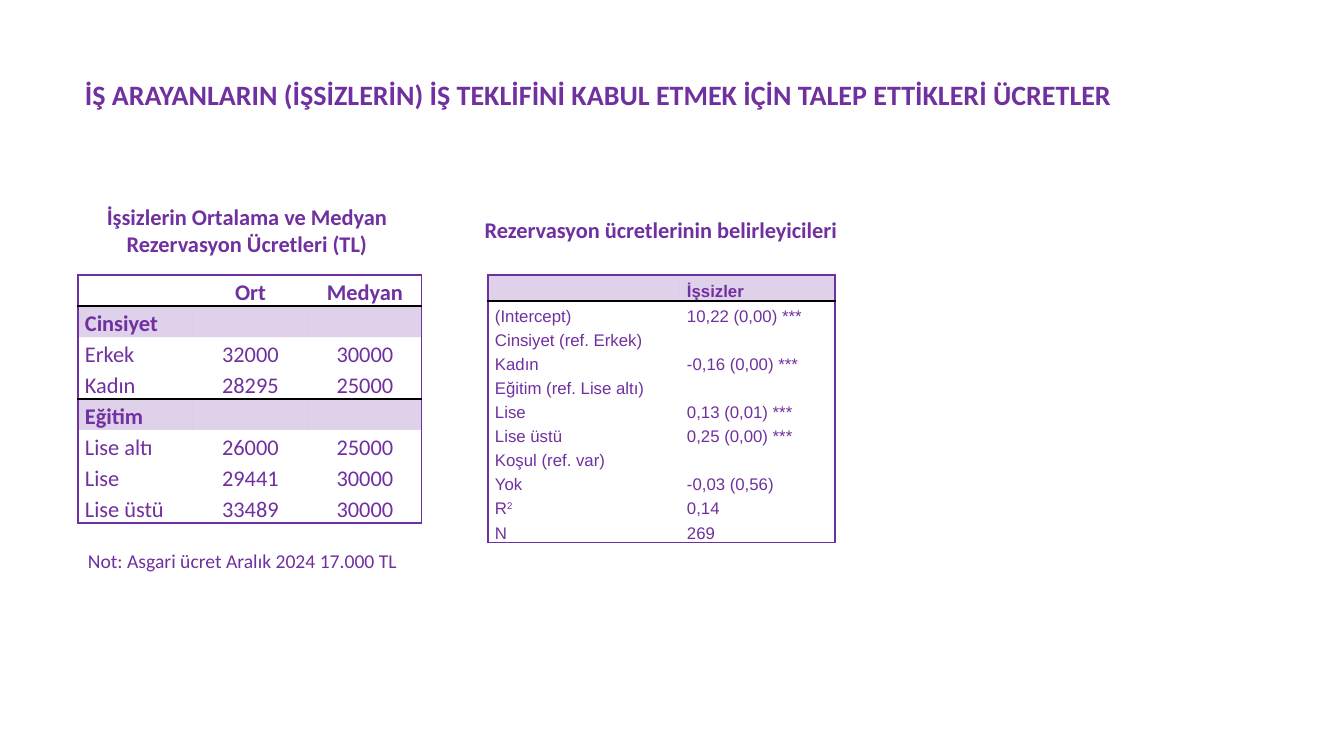
from dataclasses import dataclass

from lxml import etree
from pptx import Presentation
from pptx import util as u
from pptx.dml.color import RGBColor
from pptx.enum import text as t
from pptx.oxml import ns


@dataclass(frozen=True)
class Theme:
    purple: str = "7030A0"
    black: str = "000000"
    band_alpha: int = 22000
    body_font: str = "Calibri"
    model_font: str = "Arial"
    title: int = 20
    heading: int = 16
    note: int = 14
    model: int = 12
    thin: float = 1
    thick: float = 2.25


THEME = Theme()
LEFT, CENTER = t.PP_ALIGN.LEFT, t.PP_ALIGN.CENTER
OUTER = (THEME.purple, THEME.thin)
HEADER_RULE = (THEME.black, THEME.thick)
GROUP_RULE = (THEME.black, THEME.thin)

WAGES = [
    ("", "Ort", "Medyan"),
    ("Cinsiyet", "", ""),
    ("Erkek", "32000", "30000"),
    ("Kadın", "28295", "25000"),
    ("Eğitim", "", ""),
    ("Lise altı", "26000", "25000"),
    ("Lise", "29441", "30000"),
    ("Lise üstü", "33489", "30000"),
]
MODEL = [
    ("", "İşsizler"),
    ("(Intercept)", "10,22 (0,00) ***"),
    ("Cinsiyet (ref. Erkek)", ""),
    ("Kadın", "-0,16 (0,00) ***"),
    ("Eğitim (ref. Lise altı)", ""),
    ("Lise", "0,13 (0,01) ***"),
    ("Lise üstü", "0,25 (0,00) ***"),
    ("Koşul (ref. var)", ""),
    ("Yok", "-0,03 (0,56)"),
    ("R^2", "0,14"),
    ("N", "269"),
]


def px(length):
    return u.Emu(round(length * 914400 / 100.8))


def write(para, words, size, font=THEME.body_font, bold=False, align=LEFT, spacing=None):
    para.alignment = align
    if spacing:
        para.line_spacing = spacing
    base, _, raised = words.partition("^")
    for part in filter(None, (base, raised)):
        span = para.add_run()
        span.text = part
        span.font.name = font
        span.font.size = u.Pt(size)
        span.font.bold = bold
        span.font.color.rgb = RGBColor.from_string(THEME.purple)
        if part is raised:
            span.font._element.set("baseline", "30000")
    if not words:
        end = etree.SubElement(para._p, ns.qn("a:endParaRPr"))
        end.set("sz", str(size * 100))
        etree.SubElement(end, ns.qn("a:latin")).set("typeface", font)


def add_label(page, area, words, size, anchor=t.MSO_ANCHOR.TOP, **style):
    box = page.shapes.add_textbox(*map(px, area))
    frame = box.text_frame
    frame.word_wrap = True
    frame.vertical_anchor = anchor
    write(frame.paragraphs[0], words, size, **style)


def set_borders(cell, **sides):
    properties = cell._tc.get_or_add_tcPr()
    for index, side in enumerate("LRTB"):
        line = etree.Element(ns.qn("a:ln" + side))
        if sides[side]:
            color, width = sides[side]
            line.set("w", str(u.Pt(width)))
            fill = etree.SubElement(line, ns.qn("a:solidFill"))
            etree.SubElement(fill, ns.qn("a:srgbClr")).set("val", color)
        else:
            etree.SubElement(line, ns.qn("a:noFill"))
        properties.insert(index, line)


def fill_cell(cell, banded):
    if not banded:
        cell.fill.background()
        return
    cell.fill.solid()
    cell.fill.fore_color.rgb = RGBColor.from_string(THEME.purple)
    color = cell._tc.tcPr.find(".//" + ns.qn("a:srgbClr"))
    etree.SubElement(color, ns.qn("a:alpha")).set("val", str(THEME.band_alpha))


def add_grid(page, left, top, data, widths, heights, bands, bold_rows, rules, size, font, value_align):
    area = (left, top, sum(widths), sum(heights))
    table = page.shapes.add_table(len(data), len(widths), *map(px, area)).table
    table.first_row = table.horz_banding = False
    for column, width in zip(table.columns, widths):
        column.width = px(width)
    for row, height in zip(table.rows, heights):
        row.height = px(height)
    rules = {0: OUTER, len(data): OUTER, **rules}
    last = len(widths) - 1
    for r, record in enumerate(data):
        for c, words in enumerate(record):
            cell = table.cell(r, c)
            cell.margin_left = cell.margin_right = px(7)
            cell.margin_top = cell.margin_bottom = 0
            cell.vertical_anchor = t.MSO_ANCHOR.BOTTOM
            write(cell.text_frame.paragraphs[0], words, size, font=font, bold=r in bold_rows,
                  align=value_align if c else LEFT, spacing=1.15)
            fill_cell(cell, r in bands)
            set_borders(cell, L=OUTER if c == 0 else None, R=OUTER if c == last else None,
                        T=rules.get(r), B=rules.get(r + 1))


def add_title(page, area):
    add_label(page, area, "İŞ ARAYANLARIN (İŞSİZLERİN) İŞ TEKLİFİNİ KABUL ETMEK İÇİN TALEP ETTİKLERİ ÜCRETLER",
              THEME.title, bold=True, anchor=t.MSO_ANCHOR.MIDDLE)


def add_wages(page, left, top):
    add_label(page, (left - 3, top - 77, 344, 64),
              "İşsizlerin Ortalama ve Medyan Rezervasyon Ücretleri (TL)",
              THEME.heading, bold=True, align=CENTER)
    add_grid(page, left, top, WAGES, [115, 115, 114], [31] * len(WAGES), {1, 4}, {0, 1, 4},
             {1: HEADER_RULE, 4: GROUP_RULE}, THEME.heading, THEME.body_font, CENTER)
    add_label(page, (left, top + 269, 341, 34), "Not: Asgari ücret Aralık 2024 17.000 TL", THEME.note)


def add_model(page, left, top):
    add_label(page, (left - 19, top - 64, 384, 37), "Rezervasyon ücretlerinin belirleyicileri",
              THEME.heading, bold=True, align=CENTER)
    add_grid(page, left, top, MODEL, [192, 155], [26, 25] + [24] * 8 + [25], {0}, {0},
             {1: HEADER_RULE}, THEME.model, THEME.model_font, LEFT)


def main():
    deck = Presentation()
    deck.slide_width, deck.slide_height = px(1344), px(756)
    page = deck.slides.add_slide(deck.slide_layouts[6])
    add_title(page, (75, 68, 1099, 53))
    add_wages(page, 78, 275)
    add_model(page, 488, 275)
    deck.save("out.pptx")


if __name__ == "__main__":
    main()
